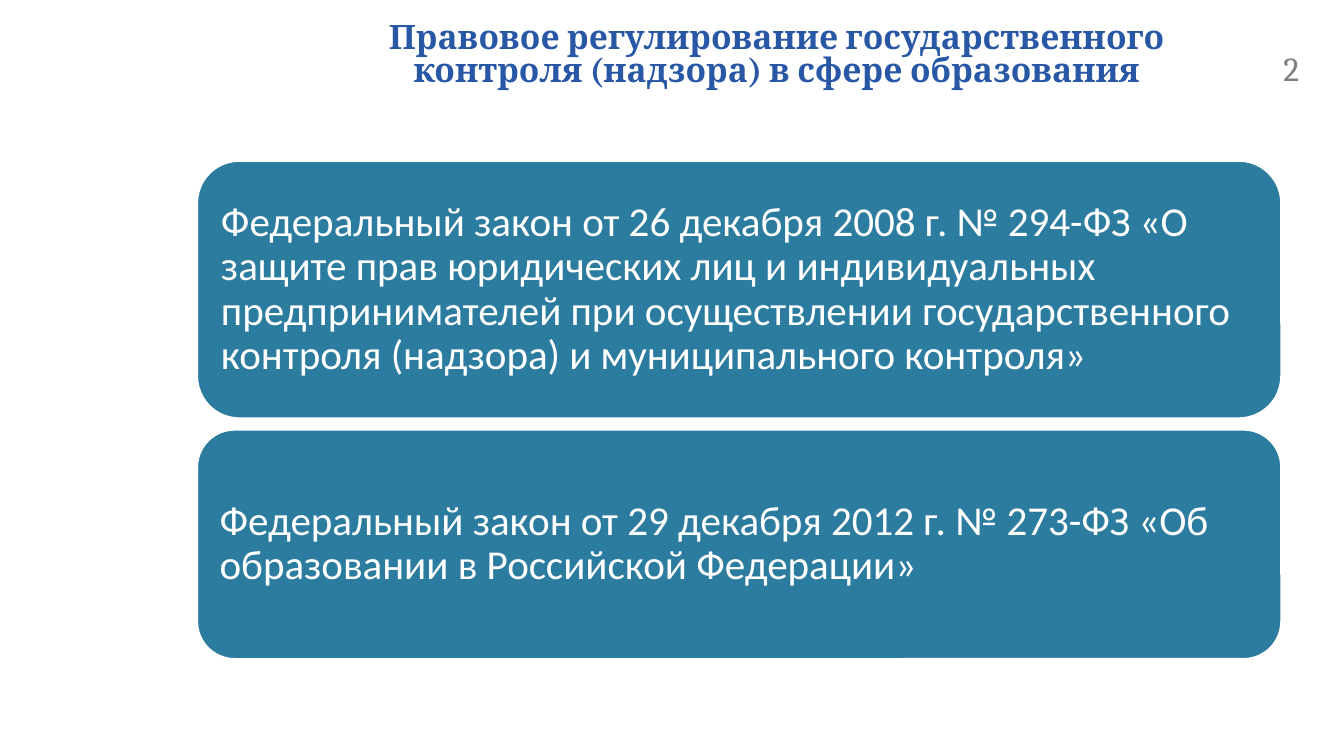
from pptx import Presentation
from pptx.dml.color import RGBColor
from pptx.enum.shapes import MSO_SHAPE
from pptx.enum.text import MSO_ANCHOR, PP_ALIGN
from pptx.util import Inches, Pt

ROUNDED = MSO_SHAPE.ROUNDED_RECTANGLE
TOP, MIDDLE = MSO_ANCHOR.TOP, MSO_ANCHOR.MIDDLE
LEFT, CENTER = PP_ALIGN.LEFT, PP_ALIGN.CENTER

BLUE = RGBColor(0x28, 0x57, 0xA5)
GRAY = RGBColor(0x80, 0x80, 0x80)
TEAL = RGBColor(0x2C, 0x7C, 0x9F)
WHITE = RGBColor(0xFF, 0xFF, 0xFF)

SLIDE_WIDTH = 10
SLIDE_HEIGHT = SLIDE_WIDTH * 9 / 16
CARD_LEFT, CARD_WIDTH = 1.46, 8.08
CARDS_TOP, CARD_GAP = 1.19, 0.07
CARDS = [
    (1.93, "Федеральный закон от 26 декабря 2008 г. № 294-ФЗ «О защите прав "
           "юридических лиц и индивидуальных предпринимателей при осуществлении "
           "государственного контроля (надзора) и муниципального контроля»"),
    (1.72, "Федеральный закон от 29 декабря 2012 г. № 273-ФЗ «Об образовании "
           "в Российской Федерации»"),
]


def write(shape, text, font_name, size, color, align=LEFT, spacing=1.0):
    """Fill the shape with one formatted, wrapping paragraph."""
    frame = shape.text_frame
    frame.word_wrap = True
    para = frame.paragraphs[0]
    para.text = text
    para.alignment = align
    para.line_spacing = spacing
    span = para.runs[0]
    span.font.name = font_name
    span.font.size = Pt(size)
    span.font.color.rgb = color
    return span


deck = Presentation()
deck.slide_width, deck.slide_height = Inches(SLIDE_WIDTH), Inches(SLIDE_HEIGHT)
page = deck.slides.add_slide(deck.slide_layouts[6])

title = page.shapes.add_textbox(Inches(2.62), Inches(0.13), Inches(6.32), Inches(0.63))
title.text_frame.vertical_anchor = TOP
heading = write(title, "Правовое регулирование государственного контроля (надзора) "
                "в сфере образования", "Cambria", 18, BLUE, CENTER, 0.8)
heading.font.bold = True

number = page.shapes.add_textbox(Inches(9.45), Inches(0.31), Inches(0.55), Inches(0.3))
write(number, "2", "Cambria", 18, GRAY)

top = CARDS_TOP
for height, law in CARDS:
    card = page.shapes.add_shape(ROUNDED, Inches(CARD_LEFT), Inches(top),
                                 Inches(CARD_WIDTH), Inches(height))
    card.shadow.inherit = False
    card.fill.solid()
    card.fill.fore_color.rgb = TEAL
    card.line.color.rgb = WHITE
    card.line.width = Pt(2)
    frame = card.text_frame
    frame.vertical_anchor = MIDDLE
    frame.margin_left = frame.margin_right = Inches(0.09)
    frame.margin_top = frame.margin_bottom = Inches(0.09)
    write(card, law, "Calibri", 22, WHITE, spacing=0.9)
    top += height + CARD_GAP

deck.save("out.pptx")
